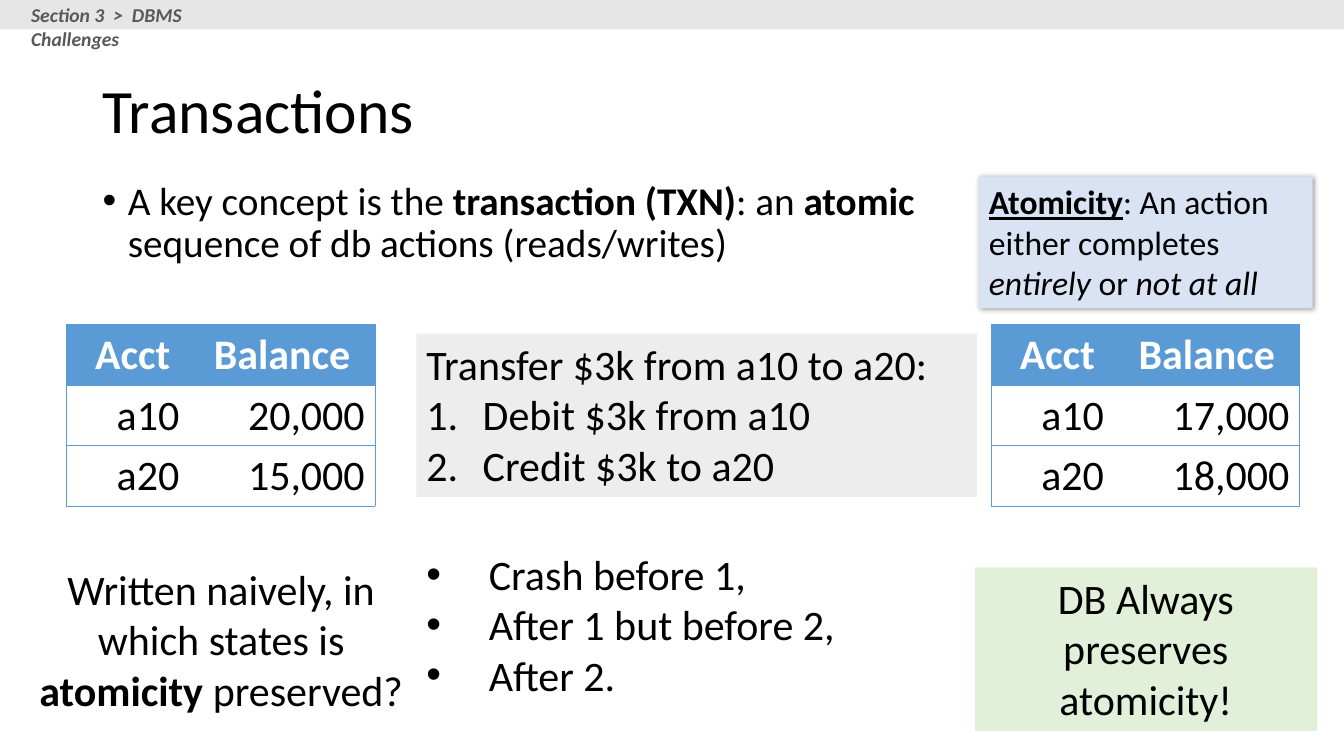
from lxml.etree import SubElement as Sub
from pptx import Presentation
from pptx.dml.color import RGBColor as RGB
from pptx.enum.shapes import MSO_SHAPE as SHAPE
from pptx.enum.text import MSO_ANCHOR as ANCHOR, PP_ALIGN as ALIGN
from pptx.oxml.ns import qn
from pptx.util import Inches, Pt

COLORS = {
    "black": "000000", "white": "FFFFFF", "gray": "595959", "bar": "E7E6E6",
    "definition": "DAE3F3", "steps": "EDEDED", "answer": "E2F0D9", "table": "5B9BD5",
}
BOLD = {"bold": True}
ITALIC = {"italic": True}


class Deck:
    """Adds styled elements to the current slide."""

    def __init__(self, width, height):
        self.prs = Presentation()
        self.prs.slide_width, self.prs.slide_height = Inches(width), Inches(height)
        self.slide = self.prs.slides.add_slide(self.prs.slide_layouts[6])
        self.font = "Calibri"

    def color(self, name):
        return RGB.from_string(COLORS[name])

    def add_runs(self, p, runs, size, color="black", **base):
        for text, extra in runs:
            r = p.add_run()
            r.text = text
            style = {"name": self.font, "size": Pt(size), **base, **extra}
            for key, value in style.items():
                setattr(r.font, key, value)
            r.font.color.rgb = self.color(color)

    def bullet(self, p, mark, indent):
        pPr = p._p.get_or_add_pPr()
        pPr.set("marL", str(Inches(indent)))
        pPr.set("indent", str(-Inches(indent)))
        if mark == "1.":
            Sub(pPr, qn("a:buFont"), typeface="+mj-lt")
            Sub(pPr, qn("a:buAutoNum"), type="arabicPeriod")
        else:
            Sub(pPr, qn("a:buFont"), typeface="Arial")
            Sub(pPr, qn("a:buChar"), char=mark)

    def fill_text(self, sp, paragraphs, size, anchor=ANCHOR.TOP, mark=None,
                  indent=0, plain_first=False, para=None, **style):
        tf = sp.text_frame
        tf.word_wrap = True
        tf.vertical_anchor = anchor
        for i, runs in enumerate(paragraphs):
            p = tf.add_paragraph() if i else tf.paragraphs[0]
            for key, value in {"alignment": ALIGN.LEFT, **(para or {})}.items():
                setattr(p, key, value)
            if mark and not (plain_first and i == 0):
                self.bullet(p, mark, indent)
            self.add_runs(p, runs, size, **style)

    def text(self, box, paragraphs, size, **options):
        sp = self.slide.shapes.add_textbox(*map(Inches, box))
        self.fill_text(sp, paragraphs, size, **options)

    def rect(self, box, fill, paragraphs=(), size=30, **options):
        sp = self.slide.shapes.add_shape(SHAPE.RECTANGLE, *map(Inches, box))
        sp.shadow.inherit = False
        sp.fill.solid()
        sp.fill.fore_color.rgb = self.color(fill)
        sp.line.fill.background()
        self.fill_text(sp, paragraphs, size, **options)
        return sp

    def drop_shadow(self, sp):
        effects = sp._element.spPr.find(qn("a:effectLst"))
        shadow = Sub(effects, qn("a:outerShdw"), blurRad=str(Pt(4)), dist=str(Pt(1)),
                     dir="2700000", algn="tl", rotWithShape="0")
        clr = Sub(shadow, qn("a:srgbClr"), val=COLORS["black"])
        Sub(clr, qn("a:alpha"), val="40000")

    def borders(self, cell, sides):
        tcPr = cell._tc.get_or_add_tcPr()
        for side in "LRTB":
            ln = Sub(tcPr, qn("a:ln" + side), w=str(Pt(0.5)))
            if side in sides:
                Sub(Sub(ln, qn("a:solidFill")), qn("a:srgbClr"), val=COLORS["table"])
            else:
                Sub(ln, qn("a:noFill"))

    def table(self, left, top, widths, row_height, rows):
        size = (sum(widths), row_height * len(rows))
        frame = self.slide.shapes.add_table(
            len(rows), len(widths), *map(Inches, (left, top, *size)))
        table = frame.table
        for col, width in zip(table.columns, widths):
            col.width = Inches(width)
        for i, values in enumerate(rows):
            table.rows[i].height = Inches(row_height)
            for j, value in enumerate(values):
                cell = table.cell(i, j)
                self.borders(cell, "TB" + "LR"[j])
                p = cell.text_frame.paragraphs[0]
                if i == 0:
                    cell.fill.solid()
                    cell.fill.fore_color.rgb = self.color("table")
                    p.alignment = ALIGN.CENTER
                    self.add_runs(p, [(value, BOLD)], 30, "white")
                else:
                    cell.fill.background()
                    p.alignment = ALIGN.RIGHT
                    self.add_runs(p, [(value, {"bold": False})], 30)


def main():
    deck = Deck(13.33, 7.5)
    centered = {"alignment": ALIGN.CENTER}

    deck.text((0.92, 0.4, 11.5, 1.45), [[("Transactions", {})]], 44,
              anchor=ANCHOR.MIDDLE, para={"line_spacing": 0.9})
    deck.text((0.92, 1.75, 8.39, 1.1), [[
        ("A key concept is the ", {}), ("transaction (TXN)", BOLD), (": an ", {}),
        ("atomic ", BOLD), ("sequence of db actions (reads/writes)", {}),
    ]], 28, mark="•", indent=0.25, para={"line_spacing": 0.9, "space_before": Pt(10)})

    definition = deck.rect((9.71, 1.75, 3.31, 1.31), "definition", [[
        ("Atomicity", {"bold": True, "underline": True}),
        (": An action either completes ", {}), ("entirely", ITALIC),
        (" or ", {}), ("not at all", ITALIC),
    ]], 24)
    deck.drop_shadow(definition)

    deck.rect((0, 0, 13.33, 0.29), "bar")
    deck.text((0.21, -0.02, 2.57, 0.34), [[("Section 3  >  DBMS Challenges", {})]], 14,
              color="gray", bold=True, italic=True)

    for left, balances in ((0.66, ("20,000", "15,000")), (9.83, ("17,000", "18,000"))):
        rows = [(" Acct", "Balance"), *zip(("a10", "a20"), balances)]
        deck.table(left, 3.22, (1.22, 1.84), 0.6, rows)

    steps = ("Transfer $3k from a10 to a20:", "Debit $3k from a10", "Credit $3k to a20")
    deck.rect((4.13, 3.31, 5.56, 1.62), "steps", [[(step, {})] for step in steps],
              mark="1.", indent=0.56, plain_first=True)

    crashes = ("Crash before 1,", "After 1 but before 2,", "After 2.")
    deck.text((4.13, 5.39, 5.43, 1.62), [[(crash, {})] for crash in crashes], 30,
              mark="•", indent=0.62)

    deck.text((0.21, 5.54, 3.97, 1.62), [[
        ("Written naively, in which states is ", {}), ("atomicity", BOLD),
        (" preserved?", {}),
    ]], 30, para=centered)
    deck.rect((9.67, 5.63, 3.39, 1.62), "answer",
              [[("DB Always preserves atomicity!", {})]], para=centered)

    deck.prs.save("out.pptx")


if __name__ == "__main__":
    main()
